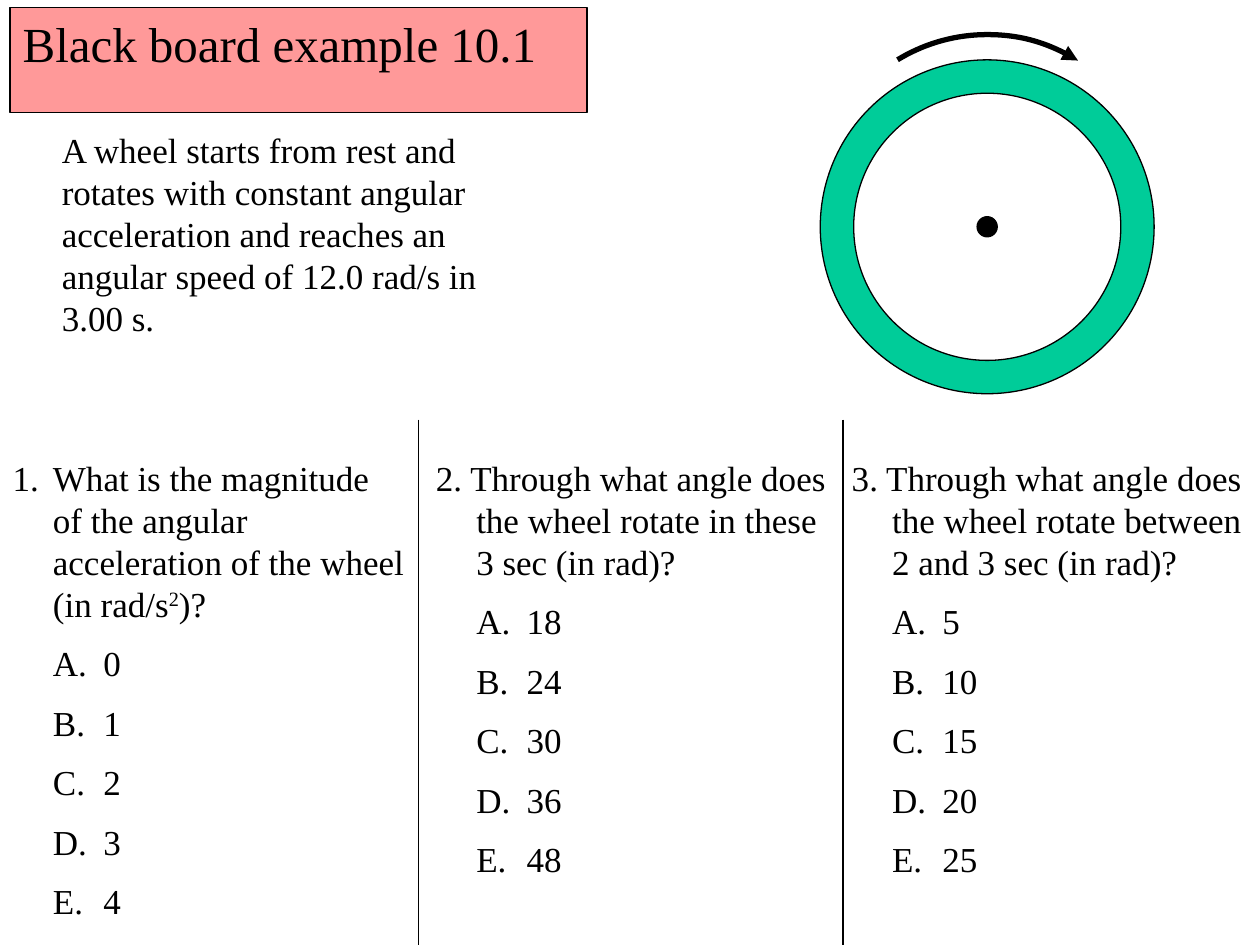
from dataclasses import dataclass

from lxml import etree
from pptx import Presentation
from pptx import util as u
from pptx.dml.color import RGBColor
from pptx.enum import shapes, text
from pptx.oxml.ns import qn


@dataclass(frozen=True)
class Theme:
    font: str = "Times New Roman"
    ink: RGBColor = RGBColor(0, 0, 0)
    paper: RGBColor = RGBColor(255, 255, 255)
    banner: RGBColor = RGBColor(0xFF, 0x99, 0x99)
    rim: RGBColor = RGBColor(0x00, 0xCC, 0x99)
    title_size: float = 28
    body_size: float = 20
    option_gap: float = 10
    thin: float = 0.75
    thick: float = 3


THEME = Theme()
COLUMNS, ROWS = 100, 75
CELL = u.Inches(0.1)
HANGING, OPTION_TAB = 3.2, 4
QUESTION_TOP, QUESTION_WIDTH = 35.7, 33.2
DIVIDER_TOP = 33.3
WHEEL_CENTER = (78.35, 18)
ARC_CENTER = (78.35, 16.4)

PROBLEM = ("A wheel starts from rest and rotates with constant angular "
           "acceleration and reaches an angular speed of 12.0 rad/s in 3.00 s.")
QUESTIONS = [
    (0, 39.3, ["1.\tWhat is the magnitude of the angular acceleration "
               "of the wheel (in rad/s", "2", ")?"], [0, 1, 2, 3, 4]),
    (33.6, 36, ["2. Through what angle does the wheel rotate in these "
                "3 sec (in rad)?"], [18, 24, 30, 36, 48]),
    (66.6, 36, ["3. Through what angle does the wheel rotate between "
                "2 and 3 sec (in rad)?"], [5, 10, 15, 20, 25]),
]


def grid(cells):
    return u.Emu(round(cells * CELL))


def place(shape, left, top, width, height):
    shape.left, shape.top = grid(left), grid(top)
    shape.width, shape.height = grid(width), grid(height)


def outline(shape, width):
    shape.line.color.rgb = THEME.ink
    shape.line.width = u.Pt(width)


def format_paragraph(paragraph, size, margin=0, indent=0, space_before=0):
    properties = paragraph._p.get_or_add_pPr()
    properties.set("marL", str(grid(margin)))
    properties.set("indent", str(grid(indent)))
    etree.SubElement(properties, qn("a:buNone"))
    paragraph.alignment = text.PP_ALIGN.LEFT
    paragraph.line_spacing = 1.0
    paragraph.space_before = u.Pt(space_before)
    paragraph.font.name = THEME.font
    paragraph.font.size = u.Pt(size)
    paragraph.font.bold = False
    paragraph.font.color.rgb = THEME.ink


def prepare_frame(shape):
    frame = shape.text_frame
    frame.word_wrap = True
    frame.auto_size = text.MSO_AUTO_SIZE.SHAPE_TO_FIT_TEXT
    frame.vertical_anchor = text.MSO_ANCHOR.TOP
    return frame


def write_text(shape, words, size, box):
    place(shape, *box)
    paragraph = prepare_frame(shape).paragraphs[0]
    paragraph.text = words
    format_paragraph(paragraph, size)


def write_question(shape, left, height, parts, answers):
    place(shape, left, QUESTION_TOP, QUESTION_WIDTH, height)
    frame = prepare_frame(shape)
    question = frame.paragraphs[0]
    for position, part in enumerate(parts):
        run = question.add_run()
        run.text = part
        if position == 1:
            run._r.get_or_add_rPr().set("baseline", "30000")
    format_paragraph(question, THEME.body_size, HANGING, -HANGING)
    for letter, answer in zip("ABCDE", answers):
        option = frame.add_paragraph()
        option.text = f"{letter}.\t{answer}"
        format_paragraph(option, THEME.body_size, HANGING + OPTION_TAB,
                         -OPTION_TAB, THEME.option_gap)


def add_round(slide, kind, center, diameter):
    corner = [grid(middle - diameter / 2) for middle in center]
    shape = slide.shapes.add_shape(kind, *corner, grid(diameter), grid(diameter))
    shape.shadow.inherit = False
    return shape


def add_disc(slide, diameter, color):
    disc = add_round(slide, shapes.MSO_SHAPE.OVAL, WHEEL_CENTER, diameter)
    disc.fill.solid()
    disc.fill.fore_color.rgb = color
    outline(disc, THEME.thin)


def add_rotation_arrow(slide, diameter, start, end):
    arrow = add_round(slide, shapes.MSO_SHAPE.ARC, ARC_CENTER, diameter)
    for index, degrees in enumerate((start, end)):
        arrow.adjustments[index] = degrees * 0.6
    arrow.fill.background()
    outline(arrow, THEME.thick)
    etree.SubElement(arrow.line._get_or_add_ln(), qn("a:tailEnd"), type="triangle")


def add_divider(slide, column):
    divider = slide.shapes.add_connector(
        shapes.MSO_CONNECTOR.STRAIGHT, grid(column), grid(DIVIDER_TOP),
        grid(column), grid(ROWS))
    outline(divider, THEME.thin)
    etree.SubElement(divider._element.spPr, qn("a:effectLst"))


def main():
    presentation = Presentation()
    presentation.slide_width, presentation.slide_height = grid(COLUMNS), grid(ROWS)
    slide = presentation.slides.add_slide(presentation.slide_layouts[4])
    title, problem, *question_boxes = slide.placeholders

    write_text(title, "Black board example 10.1", THEME.title_size,
               (0.8, 0.6, 45.8, 5.8))
    title.fill.solid()
    title.fill.fore_color.rgb = THEME.banner
    outline(title, THEME.thin)
    write_text(problem, PROBLEM, THEME.body_size, (3.9, 9.7, 38.9, 17.7))
    for box, question in zip(question_boxes, QUESTIONS):
        write_question(box, *question)

    for diameter, color in ((26.5, THEME.rim), (21.2, THEME.paper), (1.6, THEME.ink)):
        add_disc(slide, diameter, color)
    add_rotation_arrow(slide, 27.3, 238.6, 301.9)
    for column in (33.2, 66.9):
        add_divider(slide, column)
    presentation.save("out.pptx")


if __name__ == "__main__":
    main()
